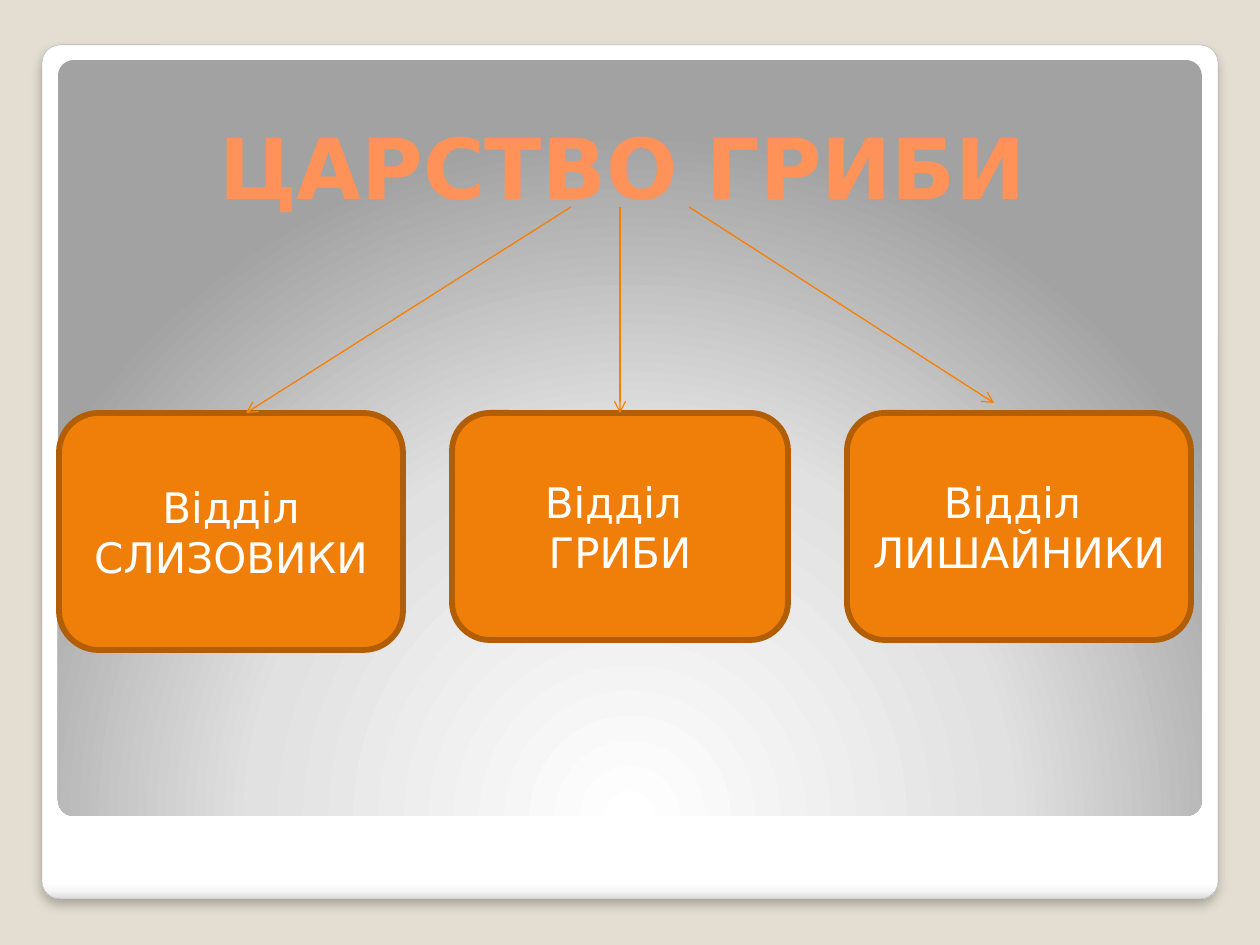
from dataclasses import dataclass

from pptx import Presentation
from pptx.dml.color import RGBColor
from pptx.enum.shapes import MSO_CONNECTOR, MSO_SHAPE
from pptx.enum.text import MSO_ANCHOR, PP_ALIGN
from pptx.oxml import parse_xml
from pptx.oxml.ns import nsdecls
from pptx.util import Pt

ROUNDED = MSO_SHAPE.ROUNDED_RECTANGLE
STRAIGHT = MSO_CONNECTOR.STRAIGHT
CENTER = PP_ALIGN.CENTER
MIDDLE, BOTTOM = MSO_ANCHOR.MIDDLE, MSO_ANCHOR.BOTTOM
TOP_SIDE = 0
EMU_PER_PX = 914400 / 126


@dataclass(frozen=True)
class Theme:
    font: str = "DejaVu Sans"
    title_size: int = 48
    box_size: int = 24
    background: str = "E3DED1"
    title: str = "FF9258"
    box: str = "F07F09"
    box_edge: str = "B25E07"
    box_text: str = "FFFFFF"
    arrow: str = "F97F00"
    frame_edge: str = "A4A4A4"
    frame_stops: tuple = ((0, "FFFFFF"), (98, "FFFFFF"), (99, "F7F7F7"), (100, "DADADA"))
    panel_stops: tuple = ((0, "FFFFFF"), (55, "E1E1E1"), (100, "A2A2A2"))


FRAME_SHADING = '<a:lin ang="5400000" scaled="0"/>'
PANEL_SHADING = ('<a:path path="circle">'
                 '<a:fillToRect l="50000" t="175000" r="50000" b="-75000"/></a:path>')
FRAME_SHADOW = (f'<a:outerShdw {nsdecls("a")} blurRad="76200" dist="50800" dir="5400000" '
                'algn="tl" rotWithShape="0"><a:srgbClr val="000000">'
                '<a:alpha val="25000"/></a:srgbClr></a:outerShdw>')


def px(*lengths):
    return [round(length * EMU_PER_PX) for length in lengths]


class SlideBuilder:
    def __init__(self, slide, theme):
        self.slide = slide
        self.theme = theme

    def background(self):
        fill = self.slide.background.fill
        fill.solid()
        fill.fore_color.rgb = RGBColor.from_string(self.theme.background)

    def edge(self, shape, color, width):
        shape.line.color.rgb = RGBColor.from_string(color)
        shape.line.width = Pt(width)

    def rounded(self, bounds):
        shape = self.slide.shapes.add_shape(ROUNDED, *px(*bounds))
        shape.shadow.inherit = False
        return shape

    def backdrop(self, bounds, stops, shading):
        """Rounded area with a gradient and tight corners."""
        area = self.rounded(bounds)
        area.adjustments[0] = 0.021
        stop_list = "".join(
            f'<a:gs pos="{position * 1000}"><a:srgbClr val="{color}"/></a:gs>'
            for position, color in stops)
        gradient = parse_xml(f'<a:gradFill {nsdecls("a")} rotWithShape="1">'
                             f'<a:gsLst>{stop_list}</a:gsLst>{shading}</a:gradFill>')
        area._element.spPr.find("{*}prstGeom").addnext(gradient)
        area.line.fill.background()
        return area

    def label(self, shape, lines, size, color, anchor, bold=False):
        frame = shape.text_frame
        frame.word_wrap = True
        frame.vertical_anchor = anchor
        frame.text = "\n".join(lines)
        for paragraph in frame.paragraphs:
            paragraph.alignment = CENTER
            for run in paragraph.runs:
                run.font.name = self.theme.font
                run.font.size = Pt(size)
                run.font.bold = bold
                run.font.color.rgb = RGBColor.from_string(color)

    def title(self, bounds, text):
        heading = self.slide.shapes.add_textbox(*px(*bounds))
        self.label(heading, [text], self.theme.title_size, self.theme.title, BOTTOM, bold=True)

    def division(self, bounds, lines):
        box = self.rounded(bounds)
        box.fill.solid()
        box.fill.fore_color.rgb = RGBColor.from_string(self.theme.box)
        self.edge(box, self.theme.box_edge, 3.35)
        self.label(box, lines, self.theme.box_size, self.theme.box_text, MIDDLE)
        return box

    def arrow(self, start, end, target=None):
        arrow = self.slide.shapes.add_connector(STRAIGHT, *px(*start, *end))
        if target is not None:
            arrow.end_connect(target, TOP_SIDE)
        self.edge(arrow, self.theme.arrow, 0.75)
        line = arrow._element.spPr.find("{*}ln")
        line.append(parse_xml(f'<a:tailEnd {nsdecls("a")} type="arrow"/>'))
        line.addnext(parse_xml(f'<a:effectLst {nsdecls("a")}/>'))


def main():
    presentation = Presentation()
    presentation.slide_width, presentation.slide_height = px(1260, 945)
    theme = Theme()
    builder = SlideBuilder(presentation.slides.add_slide(presentation.slide_layouts[6]), theme)

    # Backdrop: white frame and grey panel
    builder.background()
    frame = builder.backdrop((42, 45, 1176, 854), theme.frame_stops, FRAME_SHADING)
    builder.edge(frame, theme.frame_edge, 0.16)
    frame._element.spPr.find("{*}effectLst").append(parse_xml(FRAME_SHADOW))
    builder.backdrop((58, 60, 1144, 756), theme.panel_stops, PANEL_SHADING)

    # Kingdom
    builder.title((59, 78, 1128, 145), "ЦАРСТВО ГРИБИ")

    # Divisions
    boxes_top = 413
    builder.division((59, boxes_top, 344, 237), ["Відділ СЛИЗОВИКИ"])
    fungi = builder.division((452, boxes_top, 336, 227), ["Відділ ", "ГРИБИ"])
    builder.division((847, boxes_top, 344, 227), ["Відділ ", "ЛИШАЙНИКИ"])

    # Arrows from the kingdom to its divisions
    arrows_top = 207
    builder.arrow((571, arrows_top), (246, boxes_top))
    builder.arrow((620, arrows_top), (620, boxes_top), fungi)
    builder.arrow((689, arrows_top), (994, 403))

    presentation.save("out.pptx")


if __name__ == "__main__":
    main()
